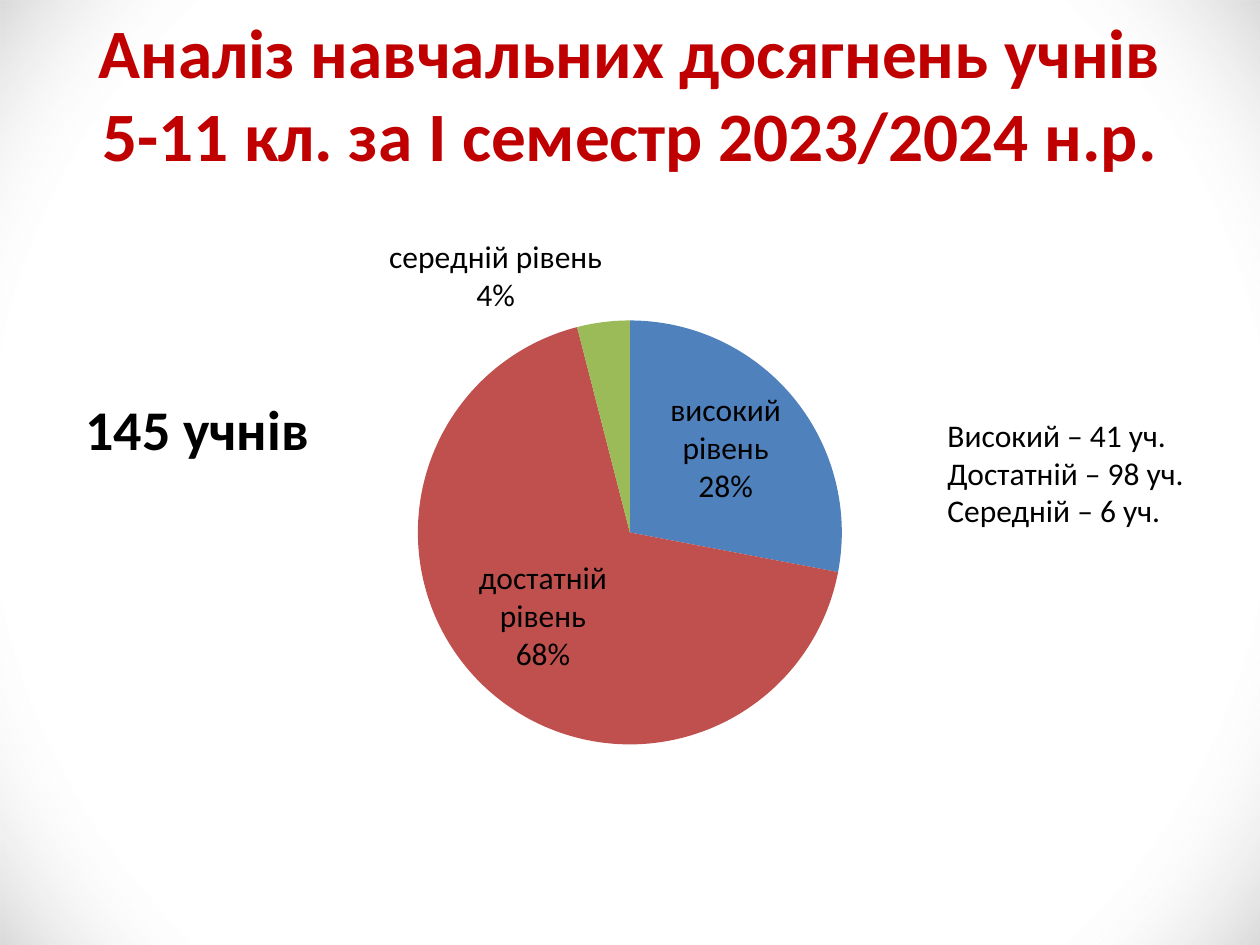
from lxml import etree
from pptx import Presentation
from pptx import util as u
from pptx.chart import data as chart_data
from pptx.dml import color
from pptx.enum import chart as ch, shapes, text
from pptx.oxml import parse_xml
from pptx.oxml.ns import nsdecls, qn

FONT = "Calibri"
BLACK = color.RGBColor(0x00, 0x00, 0x00)
WHITE = color.RGBColor(0xFF, 0xFF, 0xFF)
GREY = color.RGBColor(0xD9, 0xD9, 0xD9)
RED = color.RGBColor(0xC0, 0x00, 0x00)
LEVELS = [
    ("високий рівень", 28, color.RGBColor(0x4F, 0x81, 0xBD)),
    ("достатній рівень", 68, color.RGBColor(0xC0, 0x50, 0x4D)),
    ("середній рівень", 4, color.RGBColor(0x9B, 0xBB, 0x59)),
    ("початковий рівень", 0, color.RGBColor(0x80, 0x64, 0xA2)),
]


def style(font, size, colour=BLACK, bold=False):
    font.name, font.size, font.bold = FONT, u.Pt(size), bold
    font.color.rgb = colour


def add_backdrop(page, width, height):
    """Clear centre fading to grey in the corners, behind everything."""
    backdrop = page.shapes.add_shape(shapes.MSO_SHAPE.RECTANGLE, 0, 0, width, height)
    backdrop.shadow.inherit = False
    backdrop.line.fill.background()
    backdrop.fill.gradient()
    for stop, position, colour in zip(backdrop.fill.gradient_stops, (0.79, 1), (WHITE, GREY)):
        stop.position = position
        stop.color.rgb = colour
    gradient = backdrop.element.spPr.find(qn("a:gradFill"))
    white = gradient.find(".//" + qn("a:srgbClr"))
    etree.SubElement(white, qn("a:alpha")).set("val", "0")
    circle = parse_xml(
        f'<a:path {nsdecls("a")} path="circle">'
        '<a:fillToRect l="50000" t="50000" r="50000" b="50000"/></a:path>')
    gradient.replace(gradient.find(qn("a:lin")), circle)
    page.shapes.title.element.addprevious(backdrop.element)


def set_title(page, wording):
    title = page.shapes.title
    title.left, title.top = u.Cm(1.27), u.Cm(0.43)
    title.width, title.height = u.Cm(22.86), u.Cm(2.87)
    frame = title.text_frame
    frame.text = wording
    frame.auto_size = text.MSO_AUTO_SIZE.NONE
    frame.vertical_anchor = text.MSO_ANCHOR.MIDDLE
    para = frame.paragraphs[0]
    para.alignment = text.PP_ALIGN.CENTER
    style(para.font, 39.6, RED, True)


def add_text(page, left, top, width, height, lines, size, bold=False):
    box = page.shapes.add_textbox(u.Cm(left), u.Cm(top), u.Cm(width), u.Cm(height))
    frame = box.text_frame
    frame.word_wrap = True
    frame.auto_size = text.MSO_AUTO_SIZE.SHAPE_TO_FIT_TEXT
    frame.text = "\n".join(lines)
    for para in frame.paragraphs:
        style(para.font, size, bold=bold)


def place_plot(chart, **fractions):
    """Fix the plot area, in fractions of the chart."""
    plot_area = chart.element.find(".//" + qn("c:plotArea"))
    for old in plot_area.findall(qn("c:layout")):
        plot_area.remove(old)
    layout = etree.Element(qn("c:layout"))
    manual = etree.SubElement(layout, qn("c:manualLayout"))
    settings = {"layoutTarget": "inner", "xMode": "edge", "yMode": "edge", **fractions}
    for name, value in settings.items():
        etree.SubElement(manual, qn("c:" + name)).set("val", str(value))
    plot_area.insert(0, layout)


def hide_label(labels, index):
    label = etree.Element(qn("c:dLbl"))
    etree.SubElement(label, qn("c:idx")).set("val", str(index))
    etree.SubElement(label, qn("c:delete")).set("val", "1")
    labels._element.insert(0, label)


def add_pie(page):
    shares = [share for _, share, _ in LEVELS]
    levels = chart_data.CategoryChartData()
    levels.categories = [name for name, _, _ in LEVELS]
    for number, values in enumerate((shares, shares, [0] * len(LEVELS)), start=1):
        levels.add_series(f"Series {number}", values)
    chart = page.shapes.add_chart(
        ch.XL_CHART_TYPE.PIE, u.Cm(1.27), u.Cm(4.45), u.Cm(22.86), u.Cm(12.57), levels).chart
    chart.has_legend = False
    chart.has_title = False
    style(chart.font, 18)
    place_plot(chart, x=0.31, y=0.16, w=0.38, h=0.68)

    plot = chart.plots[0]
    plot.vary_by_categories = True
    series = plot.series[0]
    labels = series.data_labels
    labels.show_value = False
    labels.show_category_name = True
    labels.show_percentage = True
    labels.position = ch.XL_LABEL_POSITION.BEST_FIT
    style(labels.font, 18)
    # The separator follows the bubble size switch
    separator = etree.Element(qn("c:separator"))
    separator.text = "\n"
    labels._element.find(qn("c:showBubbleSize")).addnext(separator)

    for index, (_, share, colour) in enumerate(LEVELS):
        fill = series.points[index].format.fill
        fill.solid()
        fill.fore_color.rgb = colour
        if not share:
            hide_label(labels, index)
    # A new pie takes one series; this adds the others in the same style
    chart.replace_data(levels)


def main():
    deck = Presentation()
    deck.slide_width, deck.slide_height = u.Cm(25.4), u.Cm(19.05)
    page = deck.slides.add_slide(deck.slide_layouts[5])
    add_backdrop(page, deck.slide_width, deck.slide_height)
    set_title(page, "Аналіз навчальних досягнень учнів 5-11 кл. за І семестр 2023/2024 н.р.")
    add_pie(page)
    # Pupil counts beside the pie
    add_text(page, 18.85, 8.26, 5.72, 2.57,
             ["Високий – 41 уч.", "Достатній – 98 уч.", "Середній – 6 уч."], 18)
    add_text(page, 1.47, 7.82, 5.28, 1.63, ["145 учнів"], 32, bold=True)
    deck.save("out.pptx")


if __name__ == "__main__":
    main()
